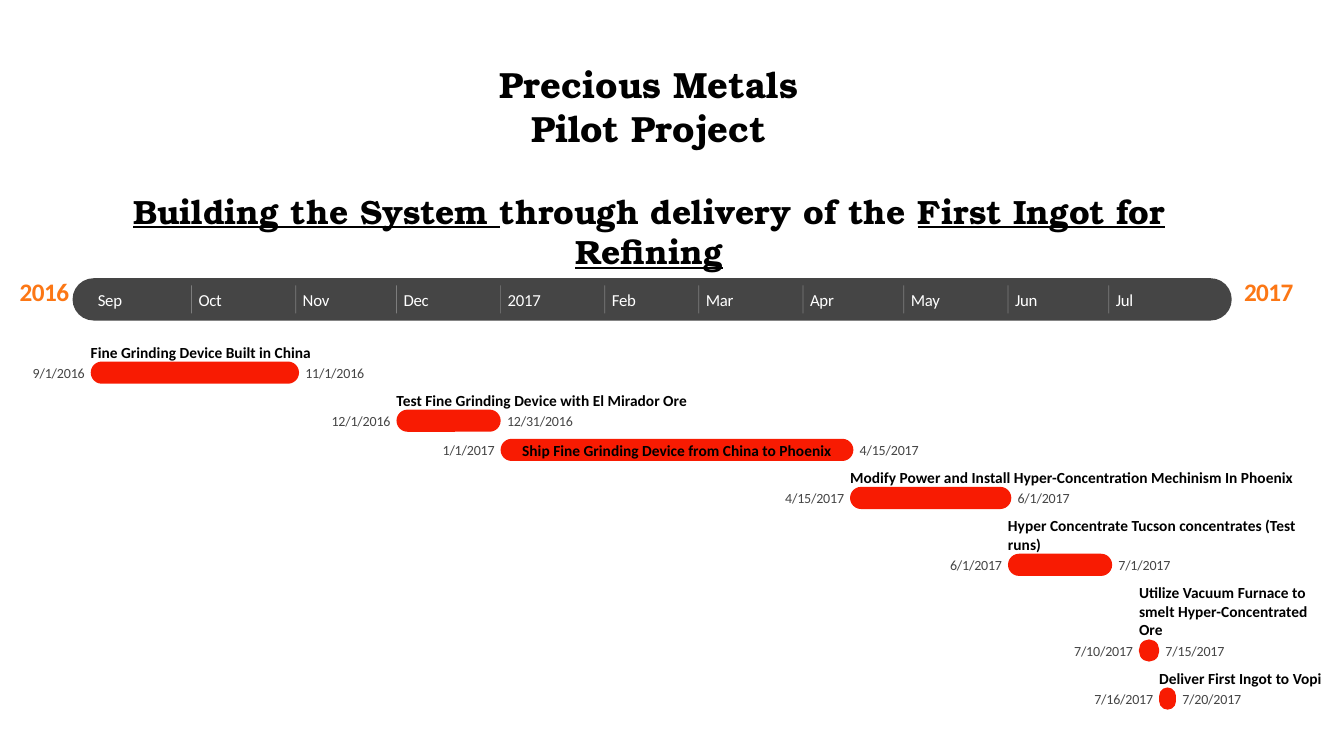
from dataclasses import dataclass
from itertools import accumulate

from lxml import etree
from pptx import Presentation
from pptx.dml.color import RGBColor
from pptx.enum.shapes import MSO_CONNECTOR, MSO_SHAPE
from pptx.enum.text import MSO_ANCHOR, PP_ALIGN
from pptx.oxml.ns import qn
from pptx.util import Inches, Pt

LEFT, MID = PP_ALIGN.LEFT, PP_ALIGN.CENTER
TOP, CENTER = MSO_ANCHOR.TOP, MSO_ANCHOR.MIDDLE
ROUND = MSO_SHAPE.ROUNDED_RECTANGLE
LINE = MSO_CONNECTOR.STRAIGHT


@dataclass(frozen=True)
class Style:
    size: float
    color: str
    font: str = "Calibri"
    bold: bool = False
    space: int = 0


@dataclass(frozen=True)
class Theme:
    band: str = "454545"
    bar: str = "F81B02"
    tick: str = "FFFFFF"
    head: Style = Style(26, "000000", "TeX Gyre Bonum", True)
    sub: Style = Style(24, "000000", "TeX Gyre Bonum", True)
    year: Style = Style(18, "FC7715", bold=True, space=-40)
    month: Style = Style(12, "FFFFFF", space=-20)
    task: Style = Style(11, "000000", bold=True)
    date: Style = Style(10, "454545", space=-10)


THEME = Theme()

# One grid column is one day; rows are the same size.
COLS, ROWS = 400, 225
CELL = Inches(1) / 30
START = 27
BAND_TOP, BAND_TALL = 82.8, 12.6
BAR_TALL, LINE_TALL, GAP = 6.6, 5.6, 2.1
INSET = 2.1

MONTHS = [("Sep", 9, 30), ("Oct", 10, 31), ("Nov", 11, 30), ("Dec", 12, 31),
          ("2017", 1, 31), ("Feb", 2, 28), ("Mar", 3, 31), ("Apr", 4, 30),
          ("May", 5, 31), ("Jun", 6, 30), ("Jul", 7, 31)]
DAYS = [0, *accumulate(days for _, _, days in MONTHS[:-1])]
FIRST = {month: day for (_, month, _), day in zip(MONTHS, DAYS)}

TASKS = [
    ("Fine Grinding Device Built in China", "9/1/2016", "11/1/2016", 1, 70),
    ("Test Fine Grinding Device with El Mirador Ore",
     "12/1/2016", "12/31/2016", 1, 90),
    ("Ship Fine Grinding Device from China to Phoenix",
     "1/1/2017", "4/15/2017", 0, 105),
    ("Modify Power and Install Hyper-Concentration Mechinism In Phoenix",
     "4/15/2017", "6/1/2017", 1, 138),
    ("Hyper Concentrate Tucson concentrates (Test runs)",
     "6/1/2017", "7/1/2017", 2, 86.7),
    ("Utilize Vacuum Furnace to smelt Hyper-Concentrated Ore",
     "7/10/2017", "7/15/2017", 3, 51.3),
    ("Deliver First Ingot to Vopi", "7/16/2017", "7/20/2017", 1, 52),
]


def cells(*spans):
    return [round(span * CELL) for span in spans]


def add_run(para, text, style, under=False):
    run = para.add_run()
    run.text = text
    font = run.font
    font.name, font.size, font.bold = style.font, Pt(style.size), style.bold
    font.color.rgb = RGBColor.from_string(style.color)
    font.underline = under
    if style.space:
        font._element.set("spc", str(style.space))


def add_frame(slide, box, anchor=CENTER):
    frame = slide.shapes.add_textbox(*cells(*box)).text_frame
    frame.word_wrap = True
    frame.vertical_anchor = anchor
    frame.margin_left = frame.margin_right = 0
    frame.margin_top = frame.margin_bottom = 0
    return frame


def add_label(slide, box, text, style, align=LEFT):
    para = add_frame(slide, box).paragraphs[0]
    para.alignment = align
    add_run(para, text, style)


def add_pill(slide, box, color):
    pill = slide.shapes.add_shape(ROUND, *cells(*box))
    pill.adjustments[0] = 0.5
    pill.shadow.inherit = False
    pill.fill.solid()
    pill.fill.fore_color.rgb = RGBColor.from_string(color)
    pill.line.fill.background()


def add_tick(slide, left):
    ends = cells(left, BAND_TOP + INSET, left, BAND_TOP + BAND_TALL - INSET)
    tick = slide.shapes.add_connector(LINE, *ends)
    tick.line.width = Pt(0.5)
    tick.line.color.rgb = RGBColor.from_string(THEME.tick)
    props = tick._element.spPr
    color = props.find(".//" + qn("a:srgbClr"))
    etree.SubElement(color, qn("a:alpha")).set("val", "30000")
    etree.SubElement(props, qn("a:effectLst"))


def add_title(slide):
    frame = add_frame(slide, (24.6, 18.6, 337.2, 50.4), TOP)
    lines = [
        (THEME.head, 0, [("Precious Metals", False)]),
        (THEME.head, 0, [("Pilot Project", False)]),
        (THEME.sub, 29, [("Building the System ", True),
                         ("through delivery of the ", False),
                         ("First Ingot for Refining", True)]),
    ]
    for place, (style, before, runs) in enumerate(lines):
        para = frame.add_paragraph() if place else frame.paragraphs[0]
        para.alignment = MID
        para.space_before = Pt(before)
        for text, under in runs:
            add_run(para, text, style, under)


def add_band(slide):
    add_pill(slide, (21.6, BAND_TOP, 345, BAND_TALL), THEME.band)
    for (name, _, _), day in zip(MONTHS, DAYS):
        left = START + day
        if day:
            add_tick(slide, left)
        box = (left + INSET, BAND_TOP, 20, BAND_TALL)
        add_label(slide, box, name, THEME.month)
    for text, left in [("2016", 2.4), ("2017", 366.8)]:
        add_label(slide, (left, 80.8, 21.6, 12), text, THEME.year, MID)


def find_day(date):
    month, day, _ = map(int, date.split("/"))
    return FIRST[month] + day - 1


def add_task(slide, top, name, start, end, lines, wide):
    left = START + find_day(start)
    span = find_day(end) - find_day(start) + 1
    bar_top = top + lines * LINE_TALL
    add_pill(slide, (left, bar_top, span, BAR_TALL), THEME.bar)
    tall, align = (lines * LINE_TALL, LEFT) if lines else (BAR_TALL, MID)
    add_label(slide, (left, top, wide, tall), name, THEME.task, align)
    for date, near in [(start, True), (end, False)]:
        room = INSET * len(date) - 0.6
        side = left - 1.4 - room if near else left + span + 1.5
        add_label(slide, (side, bar_top, room, BAR_TALL), date, THEME.date, MID)
    return bar_top + BAR_TALL + GAP


def main():
    deck = Presentation()
    deck.slide_width, deck.slide_height = cells(COLS, ROWS)
    slide = deck.slides.add_slide(deck.slide_layouts[6])
    add_band(slide)
    top = 102
    for task in TASKS:
        top = add_task(slide, top, *task)
    add_title(slide)
    deck.save("out.pptx")


if __name__ == "__main__":
    main()
